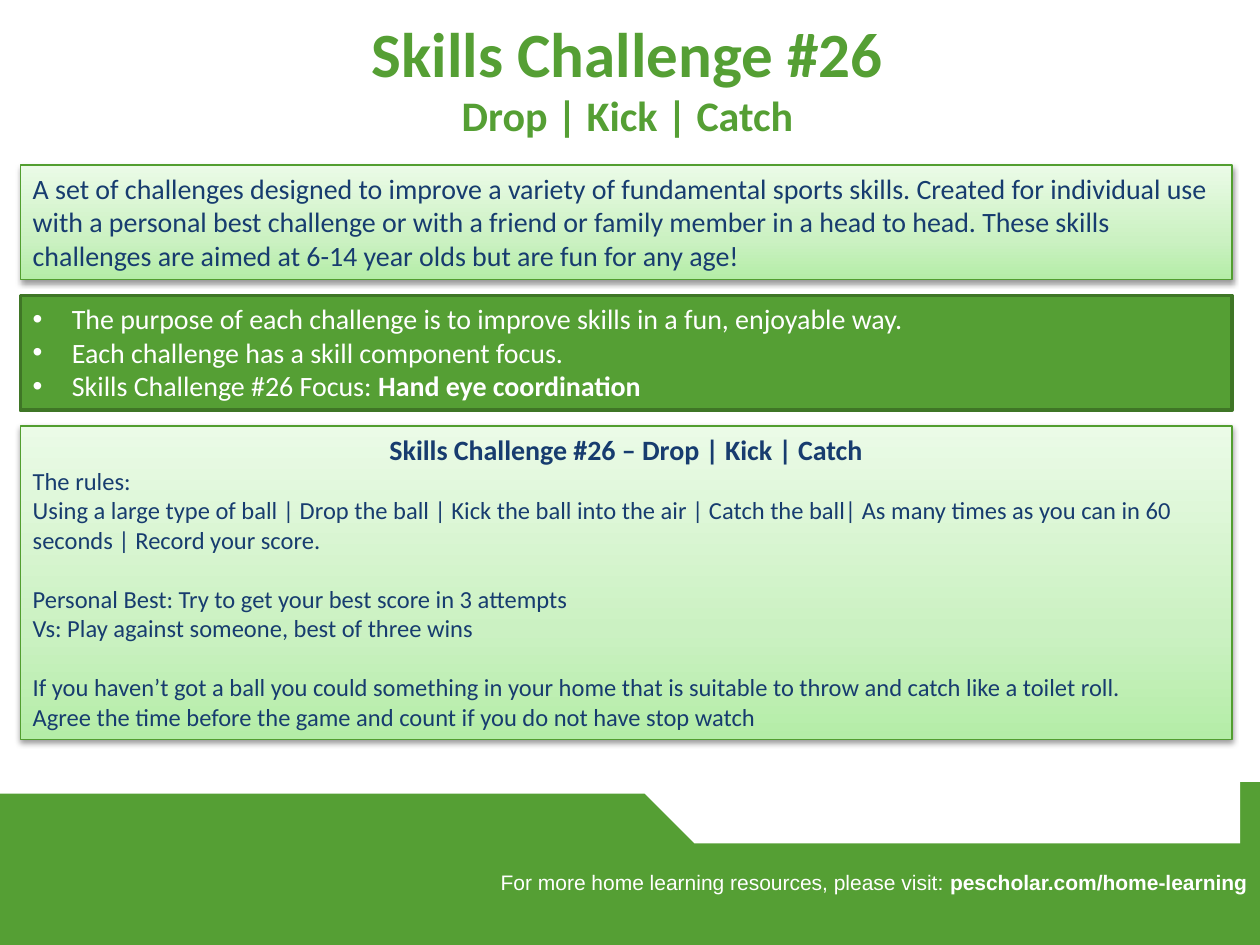
from pptx import Presentation
from pptx.dml.color import RGBColor
from pptx.enum.shapes import MSO_SHAPE
from pptx.enum.text import MSO_ANCHOR, PP_ALIGN
from pptx.oxml import parse_xml
from pptx.oxml.ns import nsdecls, qn
from pptx.util import Cm, Pt

GREEN, NAVY, WHITE = "559F34", "173C6F", "FFFFFF"
WIDTH, HEIGHT = 25.4, 19.05
LEFT, WIDE, GAP = 0.41, 24.43, 0.32
STOPS = [(0, "B4EDA7"), (35, "CBF1C2"), (100, "EBFBE7")]
WAVE = [
    (0, 16.33), (1.24, 16.1), (2.39, 15.98), (3.73, 15.92), (4.9, 15.9),
    (6.22, 15.94), (7.7, 16.02), (9.37, 16.16), (11.28, 16.34),
    (12.65, 16.5), (14.15, 16.69), (15.65, 16.86), (17.02, 17),
    (18.29, 17.09), (19.41, 17.15), (20.93, 17.18), (22.2, 17.17),
    (23.24, 17.1), (24.08, 17.02), (24.87, 16.92), (25.48, 16.78),
]
INTRO = (
    "A set of challenges designed to improve a variety of fundamental sports "
    "skills. Created for individual use with a personal best challenge or with "
    "a friend or family member in a head to head. These skills challenges are "
    "aimed at 6-14 year olds but are fun for any age!"
)
AIMS = [
    [("The purpose of each challenge is to improve skills in a fun, enjoyable way.", False)],
    [("Each challenge has a skill component focus.", False)],
    [("Skills Challenge #26 Focus: ", False), ("Hand eye coordination", True)],
]
RULES = [
    ["The rules:",
     "Using a large type of ball | Drop the ball | Kick the ball into the air | "
     "Catch the ball| As many times as you can in 60 seconds | Record your score."],
    ["Personal Best: Try to get your best score in 3 attempts",
     "Vs: Play against someone, best of three wins"],
    ["If you haven’t got a ball you could something in your home that is "
     "suitable to throw and catch like a toilet roll.",
     "Agree the time before the game and count if you do not have stop watch"],
]


def color(code):
    return RGBColor.from_string(code)


def paint(shape, fill, line=None, width=0.75):
    shape.shadow.inherit = False
    shape.fill.solid()
    shape.fill.fore_color.rgb = color(fill)
    if line:
        shape.line.color.rgb = color(line)
        shape.line.width = Pt(width)
    else:
        shape.line.fill.background()


def glow(shape):
    """Give a box the pale green gradient and a soft shadow."""
    paint(shape, GREEN, "529E30")
    props = shape.element.spPr
    stops = "".join(
        f'<a:gs pos="{pos * 1000}"><a:srgbClr val="{code}"/></a:gs>'
        for pos, code in STOPS
    )
    props.replace(props.find(qn("a:solidFill")), parse_xml(
        f'<a:gradFill {nsdecls("a")} rotWithShape="1"><a:gsLst>{stops}</a:gsLst>'
        '<a:lin ang="16200000" scaled="0"/></a:gradFill>'))
    props.find(qn("a:effectLst")).append(parse_xml(
        f'<a:outerShdw {nsdecls("a")} blurRad="40000" dist="20000" dir="5400000" '
        'rotWithShape="0"><a:srgbClr val="000000"><a:alpha val="38000"/>'
        '</a:srgbClr></a:outerShdw>'))


def add_box(slide, top, height):
    box = slide.shapes.add_shape(
        MSO_SHAPE.RECTANGLE, Cm(LEFT), Cm(top), Cm(WIDE), Cm(height))
    box.text_frame.word_wrap = True
    box.text_frame.vertical_anchor = MSO_ANCHOR.TOP
    return box


def add_text(slide, left, top, width, height):
    frame = slide.shapes.add_textbox(
        Cm(left), Cm(top), Cm(width), Cm(height)).text_frame
    frame.word_wrap = True
    return frame


def style(para, size, code, face="Calibri", align=PP_ALIGN.LEFT, bold=None):
    para.alignment = align
    font = para.font
    font.size, font.name, font.bold = Pt(size), face, bold
    font.color.rgb = color(code)


def add_runs(para, runs):
    for text, bold in runs:
        run = para.add_run()
        run.text = text
        if bold:
            run.font.bold = True


def next_para(frame):
    first = frame.paragraphs[0]
    return frame.add_paragraph() if first.runs else first


def add_bullet(para):
    props = para._p.get_or_add_pPr()
    props.set("marL", str(Cm(0.79)))
    props.set("indent", str(-Cm(0.79)))
    props.append(parse_xml(f'<a:buFont {nsdecls("a")} typeface="Arial"/>'))
    props.append(parse_xml(f'<a:buChar {nsdecls("a")} char="•"/>'))


def add_wave(slide):
    """Green band along the foot, cut by a white wave."""
    band = slide.shapes.add_shape(
        MSO_SHAPE.RECTANGLE, 0, Cm(15.77), Cm(WIDTH), Cm(HEIGHT - 15.77))
    paint(band, GREEN)
    path = slide.shapes.build_freeform(*WAVE[0], scale=Cm(1))
    path.add_line_segments(WAVE[1:] + [(25.48, 15.19), (0, 15.19)], close=True)
    paint(path.convert_to_shape(), WHITE)


def add_title(slide):
    frame = add_text(slide, 1.22, -0.03, 22.86, 3.18)
    frame.vertical_anchor = MSO_ANCHOR.MIDDLE
    para = frame.paragraphs[0]
    style(para, 36, GREEN, align=PP_ALIGN.CENTER, bold=True)
    para.add_run().text = "Skills Challenge #26"
    para.add_line_break()
    game = para.add_run()
    game.text = "Drop | Kick | Catch"
    game.font.size = Pt(24)


def add_intro(slide, top, height):
    box = add_box(slide, top, height)
    glow(box)
    para = box.text_frame.paragraphs[0]
    para.text = INTRO
    style(para, 16, NAVY)


def add_aims(slide, top, height):
    box = add_box(slide, top, height)
    paint(box, GREEN, "3F7626", 2)
    for runs in AIMS:
        para = next_para(box.text_frame)
        add_bullet(para)
        add_runs(para, runs)
        style(para, 16, WHITE)


def add_rules(slide, top, height):
    box = add_box(slide, top, height)
    glow(box)
    head = box.text_frame.paragraphs[0]
    head.text = "Skills Challenge #26 – Drop | Kick | Catch"
    style(head, 16, NAVY, align=PP_ALIGN.CENTER, bold=True)
    for block, lines in enumerate(RULES):
        for row, text in enumerate(lines):
            para = next_para(box.text_frame)
            para.text = text
            style(para, 14, NAVY)
            if block and not row:
                para.space_before = Pt(17)


def add_footer(slide):
    para = add_text(slide, 8.61, 17.4, 16.79, 0.76).paragraphs[0]
    add_runs(para, [("For more home learning resources, please visit: ", False),
                    ("pescholar.com/home-learning", True)])
    style(para, 12, WHITE, "Arial", PP_ALIGN.RIGHT)


def main():
    deck = Presentation()
    deck.slide_width, deck.slide_height = Cm(WIDTH), Cm(HEIGHT)
    slide = deck.slides.add_slide(deck.slide_layouts[6])
    add_wave(slide)
    add_title(slide)
    top = 3.33
    for add, height in [(add_intro, 2.31), (add_aims, 2.31), (add_rules, 6.32)]:
        add(slide, top, height)
        top += height + GAP
    add_footer(slide)
    deck.save("out.pptx")


if __name__ == "__main__":
    main()
